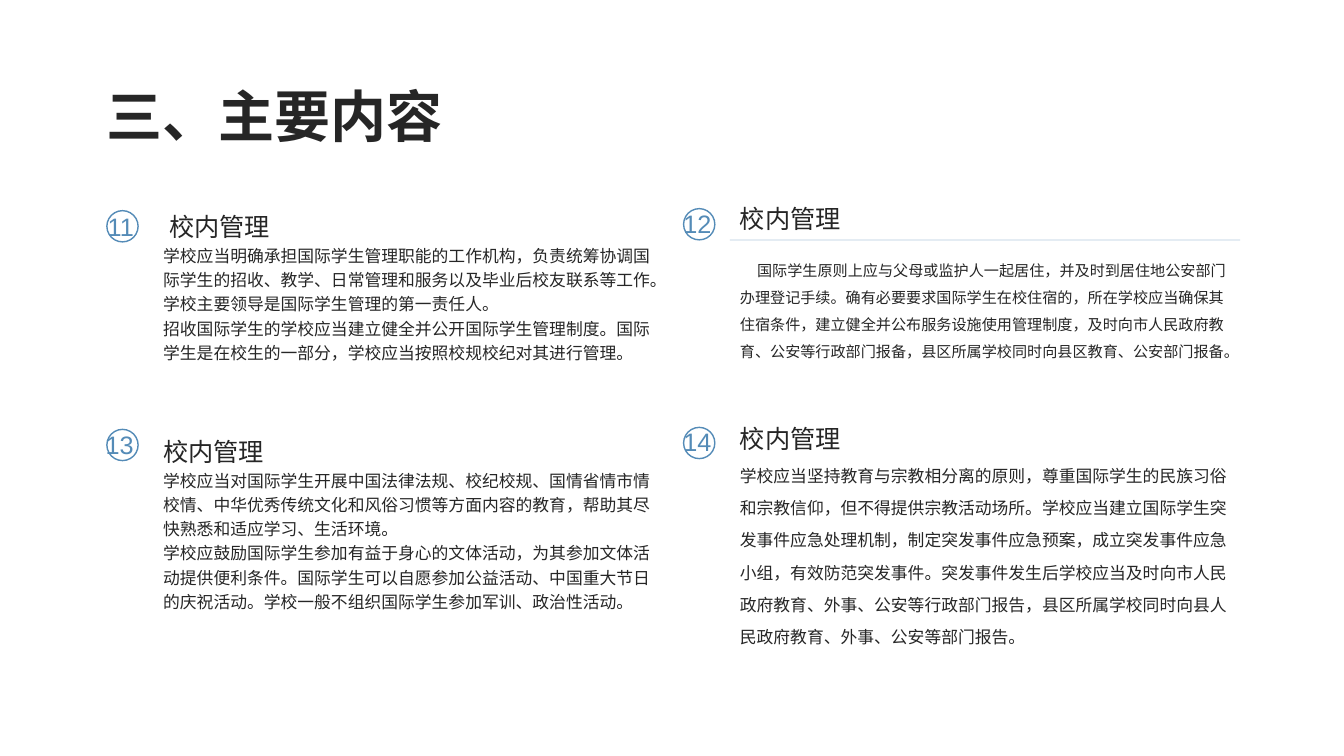
from lxml import etree
from pptx import Presentation
from pptx.dml.color import RGBColor
from pptx.enum import shapes, text
from pptx.oxml import ns
from pptx.util import Inches, Pt

INK = RGBColor(0x26, 0x26, 0x26)
BLUE = RGBColor(0x54, 0x8B, 0xB7)
LATIN = "Montserrat"
CJK = "Noto Sans CJK SC"
TITLE = "三、主要内容"
HEADING = "校内管理"
TEXT_WIDTH = 5.06
RING = 0.31

DUTIES = [
    "学校应当明确承担国际学生管理职能的工作机构，负责统筹协调国际学生的招收、教学、日常管理和服务以及毕业后校友联系等工作。学校主要领导是国际学生管理的第一责任人。",
    "招收国际学生的学校应当建立健全并公开国际学生管理制度。国际学生是在校生的一部分，学校应当按照校规校纪对其进行管理。",
]
HOUSING = [
    "国际学生原则上应与父母或监护人一起居住，并及时到居住地公安部门办理登记手续。确有必要要求国际学生在校住宿的，所在学校应当确保其住宿条件，建立健全并公布服务设施使用管理制度，及时向市人民政府教育、公安等行政部门报备，县区所属学校同时向县区教育、公安部门报备。",
]
EDUCATION = [
    "学校应当对国际学生开展中国法律法规、校纪校规、国情省情市情校情、中华优秀传统文化和风俗习惯等方面内容的教育，帮助其尽快熟悉和适应学习、生活环境。",
    "学校应鼓励国际学生参加有益于身心的文体活动，为其参加文体活动提供便利条件。国际学生可以自愿参加公益活动、中国重大节日的庆祝活动。学校一般不组织国际学生参加军训、政治性活动。",
]
SAFETY = [
    "学校应当坚持教育与宗教相分离的原则，尊重国际学生的民族习俗和宗教信仰，但不得提供宗教活动场所。学校应当建立国际学生突发事件应急处理机制，制定突发事件应急预案，成立突发事件应急小组，有效防范突发事件。突发事件发生后学校应当及时向市人民政府教育、外事、公安等行政部门报告，县区所属学校同时向县人民政府教育、外事、公安等部门报告。",
]

# left, top, height, font, line spacing, heading, body, body size, first-line indent
BLOCKS = [
    (1.52, 1.99, 0.45, LATIN, 1.2, HEADING, DUTIES, 12, 0.06),
    (7.24, 1.94, 0.45, LATIN, 1.1, HEADING, [], 12, 0),
    (7.24, 2.45, 1.6, CJK, 1.5, None, HOUSING, 10.8, 0.17),
    (1.52, 4.22, 0.45, LATIN, 1.2, HEADING, EDUCATION, 12, 0),
    (7.24, 3.97, 1.62, CJK, 1.6, HEADING, SAFETY, 12, 0),
]
# number, ring left and top, number left and top
BADGES = [
    ("11", 1.06, 2.09, 0.97, 2.05),
    ("12", 6.78, 2.07, 6.68, 2.02),
    ("13", 1.06, 4.26, 0.95, 4.21),
    ("14", 6.78, 4.24, 6.68, 4.18),
]


def style(para, size, font, color, spacing=None):
    para.font.size = Pt(size)
    para.font.name = font
    para.font.color.rgb = color
    para.line_spacing = spacing


def add_box(page, left, top, width, height):
    box = page.shapes.add_textbox(Inches(left), Inches(top), Inches(width), Inches(height))
    box.text_frame.word_wrap = True
    return box.text_frame


def add_block(page, left, top, height, font, spacing, heading, body, size, indent):
    frame = add_box(page, left, top, TEXT_WIDTH, height)
    lines = ([(heading, 18)] if heading else []) + [(line, size) for line in body]
    for index, (line, points) in enumerate(lines):
        para = frame.add_paragraph() if index else frame.paragraphs[0]
        para.text = line
        style(para, points, font, INK, spacing)
        if indent and index == 0:
            para._p.get_or_add_pPr().set("indent", str(Inches(indent)))


def add_badge(page, number, ring_left, ring_top, left, top):
    ring = page.shapes.add_shape(shapes.MSO_SHAPE.OVAL, Inches(ring_left), Inches(ring_top),
                                 Inches(RING), Inches(RING))
    ring.shadow.inherit = False
    ring.fill.background()
    ring.line.color.rgb = BLUE
    ring.line.width = Pt(1)
    frame = add_box(page, left, top, 0.6, 0.4)
    frame.auto_size = text.MSO_AUTO_SIZE.SHAPE_TO_FIT_TEXT
    frame.text = number
    style(frame.paragraphs[0], 18, "Arial", BLUE)


def add_rule(page, left, right, y):
    rule = page.shapes.add_connector(shapes.MSO_CONNECTOR.STRAIGHT, Inches(left), Inches(y),
                                     Inches(right), Inches(y))
    rule.line.color.rgb = BLUE
    rule.line.width = Pt(0.5)
    properties = rule._element.spPr
    color = properties.find(".//" + ns.qn("a:srgbClr"))
    etree.SubElement(color, ns.qn("a:alpha")).set("val", "44000")
    etree.SubElement(properties, ns.qn("a:effectLst"))


def add_title(page):
    title = page.shapes.title
    title.left, title.top = Inches(0.96), Inches(0.64)
    title.width, title.height = Inches(11.41), Inches(0.87)
    frame = title.text_frame
    frame.text = TITLE
    frame.auto_size = text.MSO_AUTO_SIZE.NONE
    frame.vertical_anchor = text.MSO_ANCHOR.MIDDLE
    para = frame.paragraphs[0]
    style(para, 40, LATIN, INK, 1.2)
    para.font.bold = True
    para.alignment = text.PP_ALIGN.LEFT


def main():
    deck = Presentation()
    deck.slide_width, deck.slide_height = Inches(13.33), Inches(7.5)
    page = deck.slides.add_slide(deck.slide_layouts[5])
    add_title(page)
    add_rule(page, 7.24, 7.24 + TEXT_WIDTH, 2.38)
    for block in BLOCKS:
        add_block(page, *block)
    for badge in BADGES:
        add_badge(page, *badge)
    deck.save("out.pptx")


if __name__ == "__main__":
    main()
